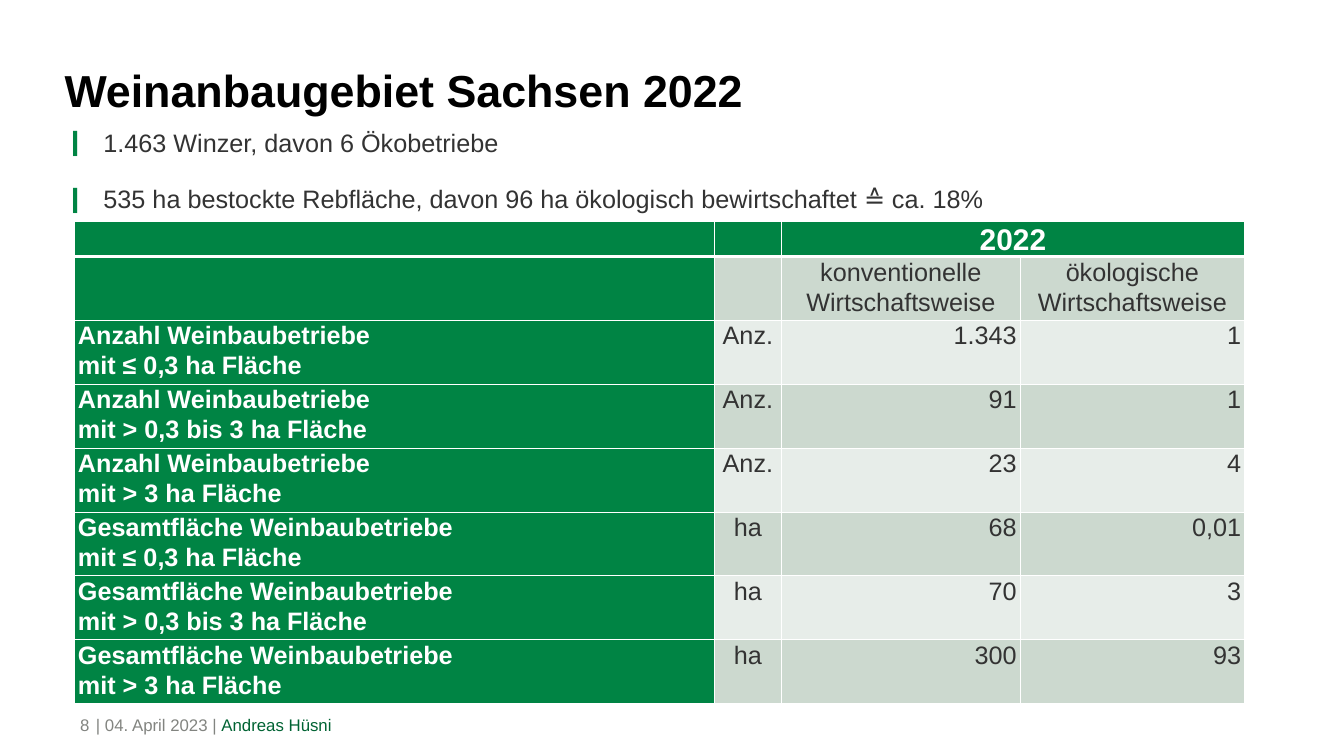
from dataclasses import dataclass
from lxml import etree
from pptx import Presentation
from pptx import util as u
from pptx.dml.color import RGBColor
from pptx.enum import text
from pptx.oxml import ns

PX = 9144  # EMU per px, 100 px to the inch
LEFT, MID, RIGHT = text.PP_ALIGN.LEFT, text.PP_ALIGN.CENTER, text.PP_ALIGN.RIGHT


@dataclass(frozen=True)
class Theme:
    face: str = "Arial"
    black: str = "000000"
    ink: str = "333333"
    white: str = "FFFFFF"
    green: str = "008444"
    deep: str = "006333"
    grey: str = "828480"
    dark: str = "CCD9CF"
    light: str = "E7EDE9"
    title: int = 48
    head: int = 32
    body: int = 27
    foot: int = 18


T = Theme()
COLS = [952, 100, 355, 334]
HEAD, ROW = 51, 95
POINTS = [
    "1.463 Winzer, davon 6 Ökobetriebe",
    "535 ha bestockte Rebfläche, davon 96 ha ökologisch bewirtschaftet ≙ ca. 18%",
]
FARMS, AREA = "Anzahl Weinbaubetriebe", "Gesamtfläche Weinbaubetriebe"
SMALL, MEDIUM, LARGE = (
    f"mit {size} ha Fläche" for size in ("≤ 0,3", "> 0,3 bis 3", "> 3"))
ROWS = [
    ["", "", "konventionelle\nWirtschaftsweise", "ökologische\nWirtschaftsweise"],
    [f"{FARMS}\n{SMALL}", "Anz.", "1.343", "1"],
    [f"{FARMS}\n{MEDIUM}", "Anz.", "91", "1"],
    [f"{FARMS}\n{LARGE}", "Anz.", "23", "4"],
    [f"{AREA}\n{SMALL}", "ha", "68", "0,01"],
    [f"{AREA}\n{MEDIUM}", "ha", "70", "3"],
    [f"{AREA}\n{LARGE}", "ha", "300", "93"],
]


def apply(item, form):
    for name, value in form.items():
        setattr(item, name, value)


def place(shape, box):
    apply(shape, dict(zip(("left", "top", "width", "height"),
                          (side * PX for side in box))))


def write(para, words, size, color, bold=False):
    run = para.add_run()
    run.text = words
    apply(run.font, {"name": T.face, "size": u.Pt(size), "bold": bold})
    run.font.color.rgb = RGBColor.from_string(color)


def frame(shape, anchor=text.MSO_ANCHOR.TOP, **margins):
    apply(shape.text_frame, {
        "word_wrap": True, "auto_size": text.MSO_AUTO_SIZE.NONE,
        "vertical_anchor": anchor, **margins})
    return shape.text_frame


def flush():
    return {f"margin_{side}": 0 for side in ("left", "top", "right", "bottom")}


def add(parent, tag, **attrs):
    return etree.SubElement(parent, ns.qn(tag), attrs)


def title(shape, box):
    place(shape, box)
    para = frame(shape, text.MSO_ANCHOR.BOTTOM, **flush()).paragraphs[0]
    para.alignment = LEFT
    write(para, "Weinanbaugebiet Sachsen 2022", T.title, T.black, True)


def bullets(shape, box):
    place(shape, box)
    body = frame(shape, **flush())
    for i, words in enumerate(POINTS):
        para = body.add_paragraph() if i else body.paragraphs[0]
        props = para._p.get_or_add_pPr()
        props.set("marL", str(58 * PX))
        props.set("indent", str(-58 * PX))
        para.space_before = u.Pt(28 if i else 0)
        add(add(props, "a:buClr"), "a:srgbClr", val=T.green)
        add(props, "a:buFont", typeface=T.face)
        add(props, "a:buChar", char="❙")
        write(para, words, T.body, T.ink)


def border(cell, row):
    """White rules, with a heavy one below the head row."""
    props = cell._tc.get_or_add_tcPr()
    for side in "LRTB":
        heavy = (row, side) in ((0, "B"), (1, "T"))
        line = add(props, f"a:ln{side}", w=str(u.Pt(3 if heavy else 1)))
        add(add(line, "a:solidFill"), "a:srgbClr", val=T.white)


def fill(cell, words, row, col):
    green = row == 0 or col == 0
    border(cell, row)
    cell.fill.solid()
    shade = T.green if green else T.dark if row % 2 else T.light
    cell.fill.fore_color.rgb = RGBColor.from_string(shade)
    apply(cell, {"margin_left": 5 * PX, "margin_right": 5 * PX,
                 "margin_top": 0, "margin_bottom": 0})
    if not words:
        return
    for i, line in enumerate(words.split("\n")):
        body = cell.text_frame
        para = body.add_paragraph() if i else body.paragraphs[0]
        align = LEFT if col == 0 else MID if row < 2 or col == 1 else RIGHT
        apply(para, {"alignment": align, "line_spacing": 1.06})
        write(para, line, T.body if row else T.head,
              T.white if green else T.ink, green)


def table(slide, box):
    data = [["", "", "2022", ""], *ROWS]
    shape = slide.shapes.add_table(len(data), len(COLS), 0, 0, PX, PX)
    place(shape, box)
    grid = shape.table
    for col, width in zip(grid.columns, COLS):
        col.width = width * PX
    for r, words in enumerate(data):
        grid.rows[r].height = (ROW if r else HEAD) * PX
        for c, word in enumerate(words):
            fill(grid.cell(r, c), word, r, c)
    grid.cell(0, 2).merge(grid.cell(0, 3))


def footer(slide, box):
    left, top, width, height = box
    split = 133
    page = slide.shapes.add_textbox(0, 0, PX, PX)
    place(page, (left, top, 150, height))
    para = frame(page, margin_right=17 * PX).paragraphs[0]
    para.alignment = RIGHT
    write(para, "8", T.foot, T.grey)
    note = slide.shapes.add_textbox(0, 0, PX, PX)
    place(note, (left + split, top, width - split, height))
    para = frame(note).paragraphs[0]
    write(para, "| 04. April 2023 | ", T.foot, T.grey)
    write(para, "Andreas Hüsni", T.foot, T.deep)


def main():
    deck = Presentation()
    apply(deck, {"slide_width": 2000 * PX, "slide_height": 1125 * PX})
    slide = deck.slides.add_slide(deck.slide_layouts[1])
    footer(slide, (0, 1059, 1503, 66))
    title(slide.shapes.title, (96, -21, 1456, 195))
    bullets(slide.placeholders[1], (96, 189, 1808, 833))
    table(slide, (111, 329, sum(COLS), HEAD + ROW * len(ROWS)))
    deck.save("out.pptx")


if __name__ == "__main__":
    main()
